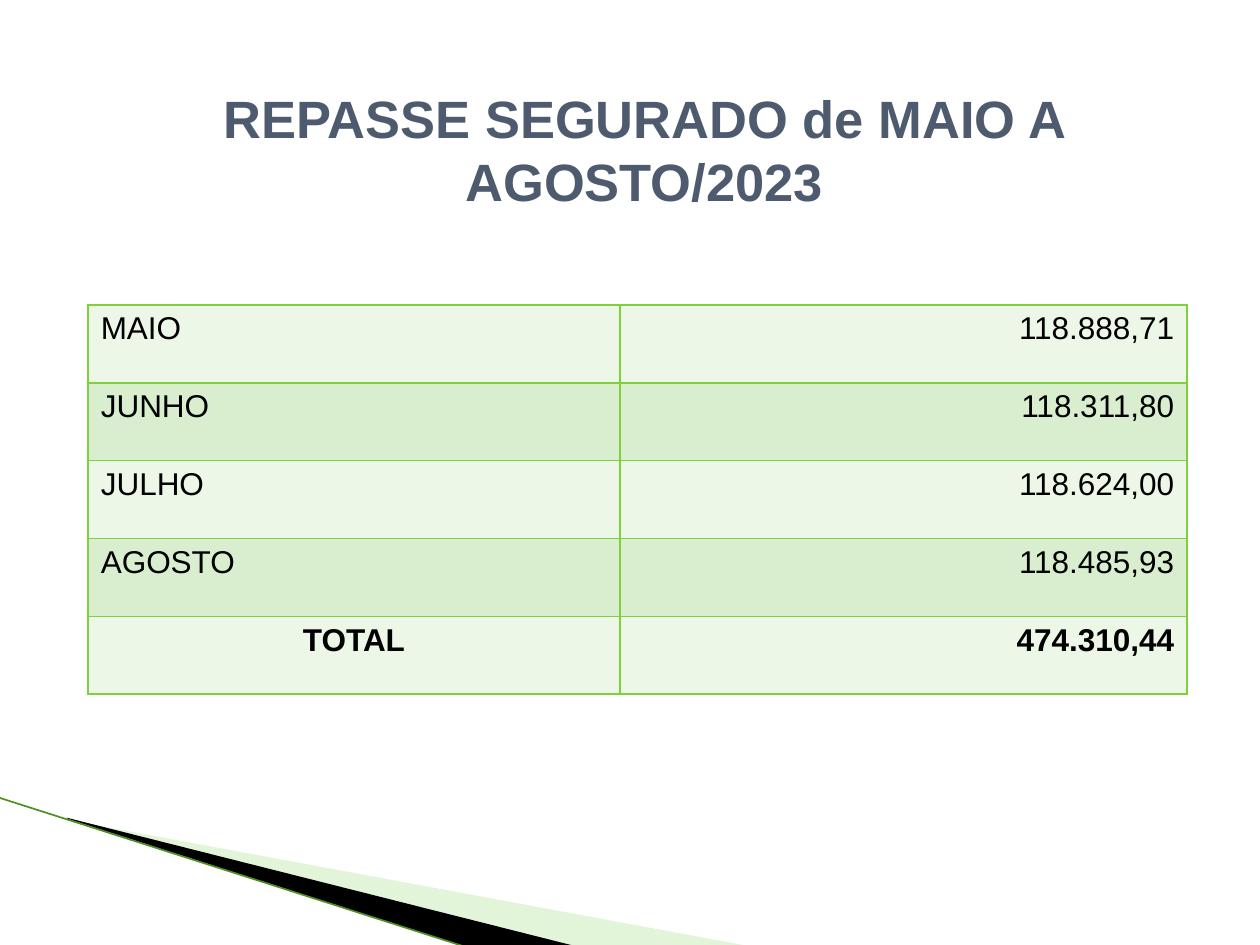
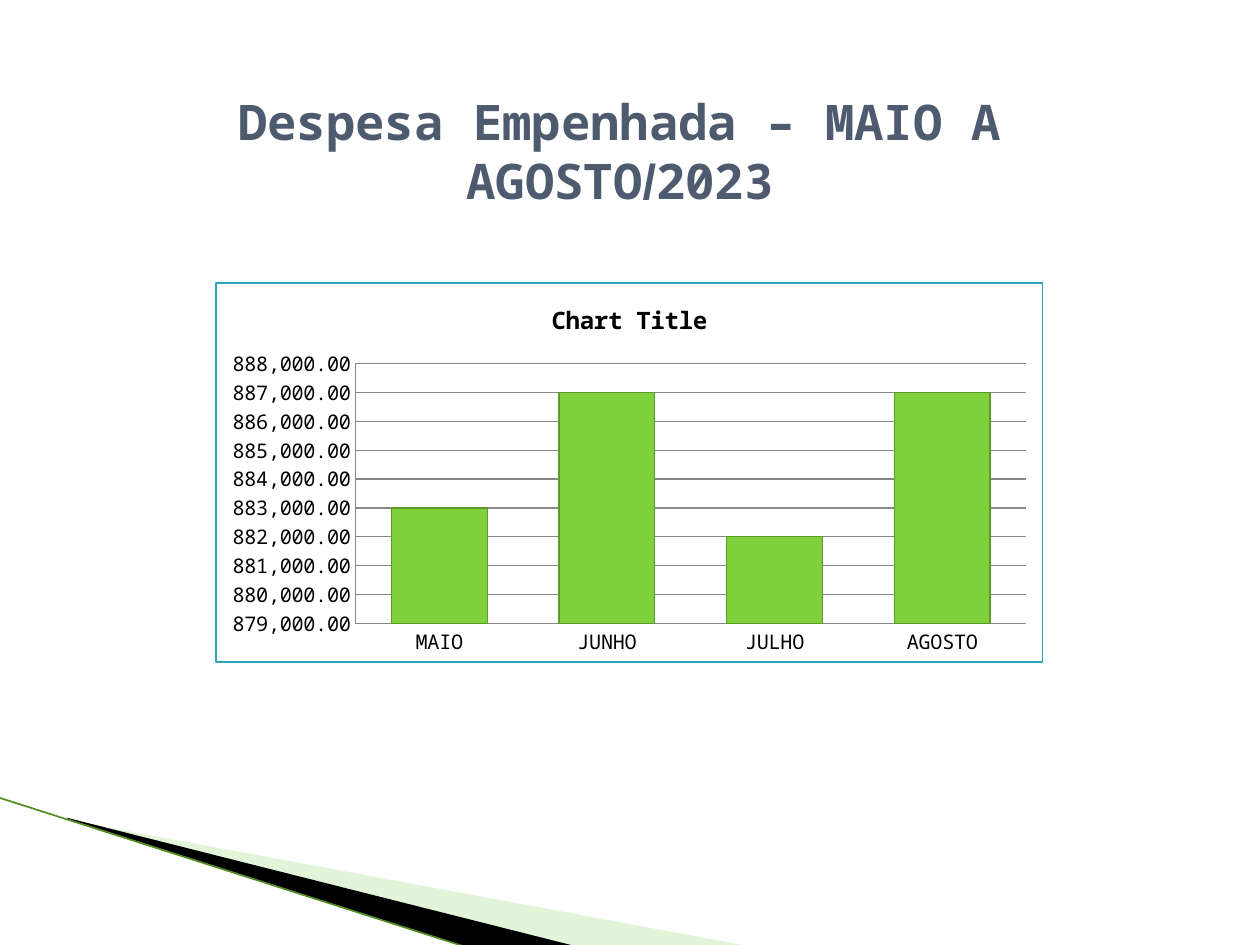
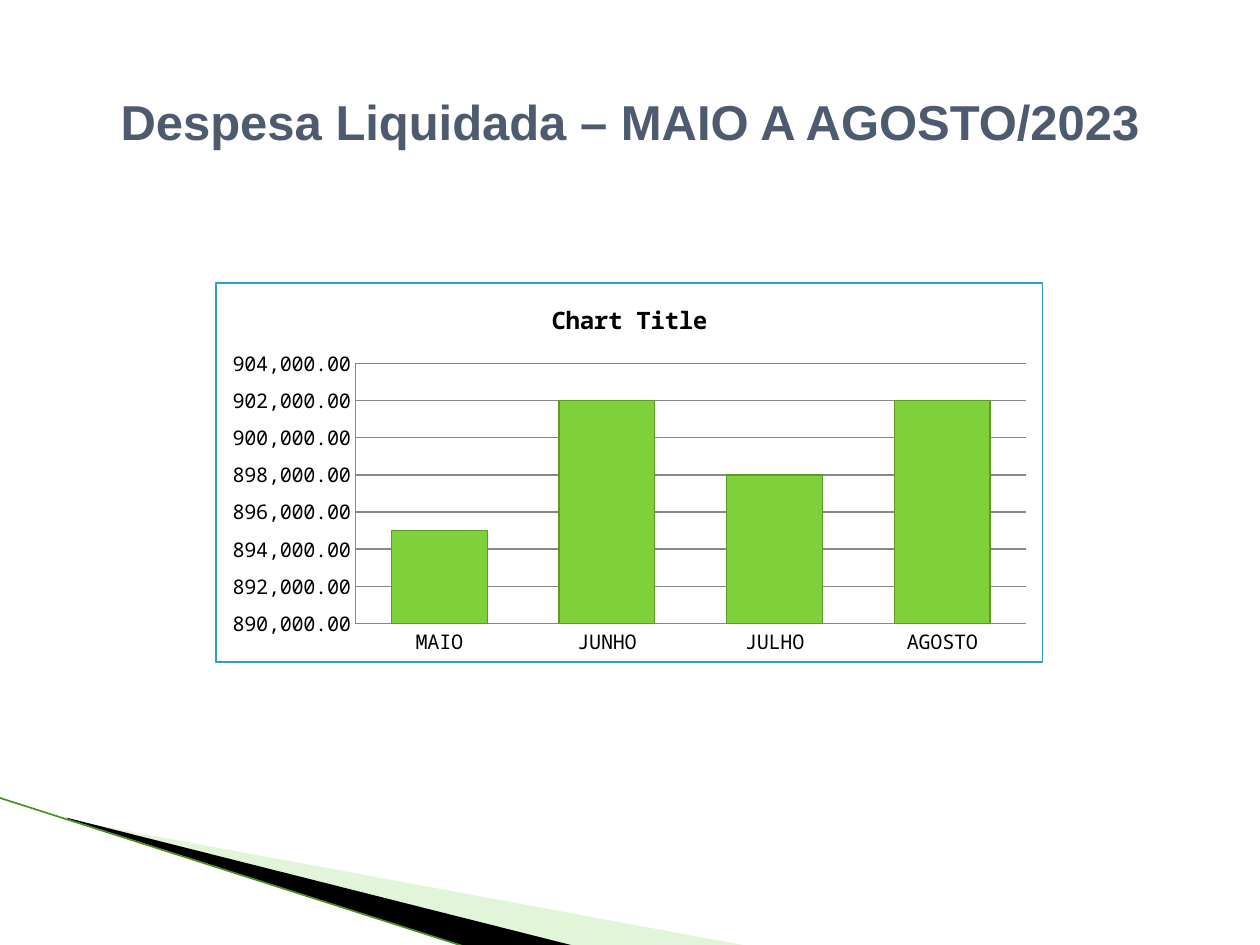
from dataclasses import dataclass

from pptx import Presentation
from pptx import util as u
from pptx.chart.data import CategoryChartData
from pptx.dml.color import RGBColor
from pptx.enum import chart as charts
from pptx.enum import shapes, text
from pptx.oxml import parse_xml
from pptx.oxml.ns import nsdecls, qn

GREEN, DARK_GREEN, PALE_GREEN = "7FD13B", "4E8F22", "B8E7A1"
BAND_FILLS = ("ECF7E8", "D8EECE")
BLACK, SLATE, TEAL, GREY = "000000", "4E5B6F", "2DA2BF", "878787"
SANS, MONO = "Arial", "Noto Sans Mono"
MONTHS = ("MAIO", "JUNHO", "JULHO", "AGOSTO")
LEFT, CENTER, RIGHT = text.PP_ALIGN.LEFT, text.PP_ALIGN.CENTER, text.PP_ALIGN.RIGHT


@dataclass(frozen=True)
class Frame:
    left: float
    top: float
    width: float
    height: float

    def lengths(self) -> list:
        return [u.Inches(v) for v in (self.left, self.top, self.width, self.height)]


@dataclass(frozen=True)
class Title:
    frame: Frame
    size: int
    spans: tuple  # (text, font name) pairs


@dataclass(frozen=True)
class Wedge:
    points: tuple
    color: str
    opacity: int = 100


@dataclass(frozen=True)
class Expense:
    title: Title
    values: tuple
    low: int
    high: int
    step: int


WEDGES = (
    Wedge(((0.55, 6.51), (5.95, 7.51), (4.56, 7.51), (0.55, 6.5)), PALE_GREEN, 40),
    Wedge(((0.53, 6.49), (4.57, 7.51), (3.72, 7.52), (0.54, 6.5)), BLACK),
)
TRANSFER_TITLE = Title(Frame(0.7, 0.63, 8.83, 1.11), 30,
                       (("REPASSE SEGURADO de MAIO A AGOSTO/2023", SANS),))
TRANSFERS = tuple(zip(
    MONTHS + ("TOTAL",),
    ("118.888,71", "118.311,80", "118.624,00", "118.485,93", "474.310,44")))
EXPENSES = (
    Expense(Title(Frame(0.67, 0.68, 8.5, 1.1), 28,
                  (("Despesa Empenhada – MAIO A AGOSTO", MONO), ("/", SANS), ("2023", MONO))),
            (883000, 887000, 882000, 887000), 879000, 888000, 1000),
    Expense(Title(Frame(0.75, 0.68, 8.5, 1.02), 28,
                  (("Despesa Liquidada – MAIO A AGOSTO/2023", SANS),)),
            (895000, 902000, 898000, 902000), 890000, 904000, 2000),
)


def rgb(color: str) -> RGBColor:
    return RGBColor.from_string(color)


def set_font(font, name: str, size: float, color: str, bold: bool = False) -> None:
    font.name, font.size, font.bold = name, u.Pt(size), bold
    font.color.rgb = rgb(color)


def paint(fill, color: str) -> None:
    fill.solid()
    fill.fore_color.rgb = rgb(color)


def line_xml(tag: str, color: str, points: float):
    return parse_xml(
        f'<{tag} {nsdecls("a")} w="{u.Pt(points)}"><a:solidFill>'
        f'<a:srgbClr val="{color}"/></a:solidFill></{tag}>')


def add_wedge(page, wedge: Wedge):
    start, *others = [(u.Inches(x), u.Inches(y)) for x, y in wedge.points]
    builder = page.shapes.build_freeform(*start)
    builder.add_line_segments(others, close=True)
    shape = builder.convert_to_shape()
    shape.shadow.inherit = False
    paint(shape.fill, wedge.color)
    shape.line.fill.background()
    if wedge.opacity < 100:
        color = shape.element.spPr.find(qn("a:solidFill"))[0]
        color.append(parse_xml(f'<a:alpha {nsdecls("a")} val="{wedge.opacity * 1000}"/>'))
    return shape


def add_edge(page):
    edge = page.shapes.add_connector(
        shapes.MSO_CONNECTOR.STRAIGHT,
        u.Inches(-0.01), u.Inches(6.33), u.Inches(3.71), u.Inches(7.52))
    edge.line.color.rgb = rgb(DARK_GREEN)
    edge.line.width = u.Pt(0.95)
    edge.element.spPr.append(parse_xml(f'<a:effectLst {nsdecls("a")}/>'))
    return edge


def decorate_layout(layout, page) -> None:
    """Draw the corner decoration on a page, then move it to the shared layout."""
    for holder in list(layout.placeholders):
        if holder.placeholder_format.idx != 0:
            holder.element.getparent().remove(holder.element)
    for shape in [add_wedge(page, wedge) for wedge in WEDGES] + [add_edge(page)]:
        layout.shapes.element.append(shape.element)


def write_title(page, title: Title) -> None:
    box = page.shapes.title
    box.left, box.top, box.width, box.height = title.frame.lengths()
    frame = box.text_frame
    frame.word_wrap = True
    frame.auto_size = text.MSO_AUTO_SIZE.NONE
    frame.vertical_anchor = text.MSO_ANCHOR.TOP
    para = frame.paragraphs[0]
    para.alignment = CENTER
    para.line_spacing = u.Pt(title.size * 1.2)
    set_font(para.font, title.spans[0][1], title.size, SLATE, bold=True)
    for words, font_name in title.spans:
        span = para.add_run()
        span.text = words
        span.font.name = font_name


def write_cell(cell, words: str, align, fill: str, bold: bool) -> None:
    borders = cell._tc.get_or_add_tcPr()
    for side in "LRTB":
        borders.append(line_xml(f"a:ln{side}", GREEN, 1))
    paint(cell.fill, fill)
    cell.text = words
    para = cell.text_frame.paragraphs[0]
    para.alignment = align
    set_font(para.font, SANS, 18, BLACK, bold)


def add_transfer_table(page) -> None:
    frame = Frame(0.7, 2.42, 8.72, 3.09)
    table = page.shapes.add_table(len(TRANSFERS), 2, *frame.lengths()).table
    table.first_row = table.horz_banding = False
    for column, width in zip(table.columns, (4.22, 4.5)):
        column.width = u.Inches(width)
    for index, (label, amount) in enumerate(TRANSFERS):
        total = label == "TOTAL"
        fill = BAND_FILLS[index % 2]
        write_cell(table.cell(index, 0), label, CENTER if total else LEFT, fill, total)
        write_cell(table.cell(index, 1), amount, RIGHT, fill, total)


def add_expense_chart(page, expense: Expense) -> None:
    data = CategoryChartData(number_format="#,##0.00")
    data.categories = MONTHS
    data.add_series("Series 1", expense.values)
    chart = page.shapes.add_chart(
        charts.XL_CHART_TYPE.COLUMN_CLUSTERED,
        *Frame(1.71, 2.24, 6.57, 3.02).lengths(), data).chart
    set_font(chart.font, MONO, 11.5, BLACK)
    border = parse_xml(f'<c:spPr {nsdecls("c", "a")}/>')
    border.append(line_xml("a:ln", TEAL, 0.75))
    chart.element.find(qn("c:txPr")).addprevious(border)

    chart.has_legend = False
    chart.has_title = True
    heading = chart.chart_title.text_frame
    heading.text = "Chart Title"
    set_font(heading.paragraphs[0].font, MONO, 13.8, BLACK, bold=True)

    plot = chart.plots[0]
    plot.gap_width = 75
    plot.vary_by_categories = False
    bars = plot.series[0]
    bars.invert_if_negative = False
    paint(bars.format.fill, GREEN)
    bars.format.line.color.rgb = rgb("5C9A2A")
    bars.format.line.width = u.Pt(0.75)

    scale = chart.value_axis
    scale.minimum_scale, scale.maximum_scale = expense.low, expense.high
    scale.major_unit = expense.step
    scale.tick_labels.number_format = "#,##0.00"
    scale.tick_labels.number_format_is_linked = False
    scale.has_major_gridlines = True
    for axis in (scale, chart.category_axis):
        axis.major_tick_mark = charts.XL_TICK_MARK.NONE
    for ruled in (scale, chart.category_axis, scale.major_gridlines):
        ruled.format.line.color.rgb = rgb(GREY)
        ruled.format.line.width = u.Pt(0.75)


def main() -> None:
    deck = Presentation()
    deck.slide_width, deck.slide_height = u.Inches(10), u.Inches(7.5)
    layout = deck.slide_layouts.get_by_name("Title Only")

    page = deck.slides.add_slide(layout)
    decorate_layout(layout, page)
    write_title(page, TRANSFER_TITLE)
    add_transfer_table(page)

    for expense in EXPENSES:
        page = deck.slides.add_slide(layout)
        write_title(page, expense.title)
        add_expense_chart(page, expense)

    deck.save("out.pptx")


if __name__ == "__main__":
    main()
